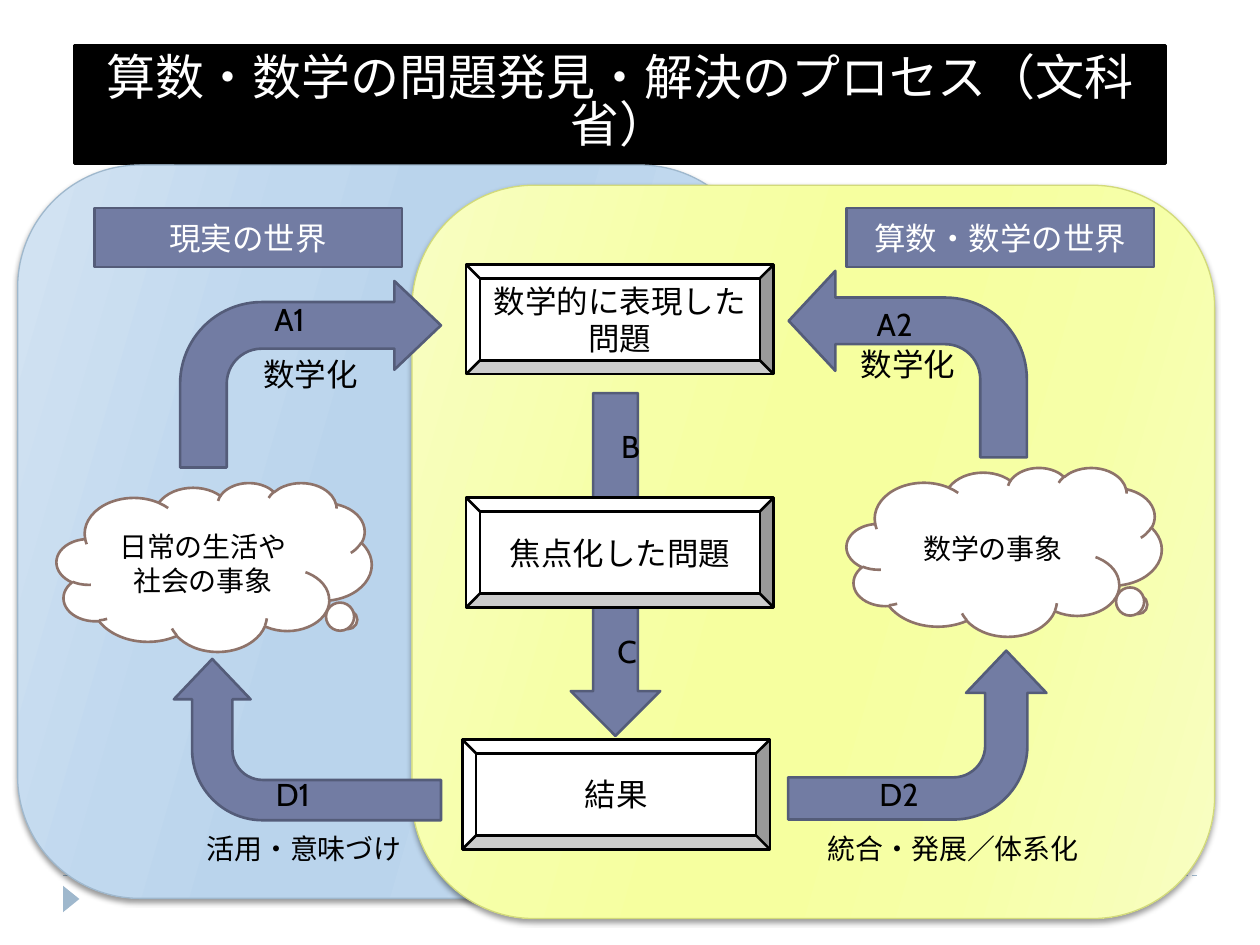
from lxml import etree
from pptx import Presentation, util as u
from pptx.dml.color import RGBColor
from pptx.enum import dml, shapes, text
from pptx.oxml import ns

COLORS = {
    "black": "000000", "white": "FFFFFF", "arrow": "727CA3", "arrow_edge": "545C79",
    "cloud_edge": "8E736A", "footer": "9FB8CD", "math_edge": "D2DA7A",
}
REAL_WORLD = ["D3E3F2", "C0D8EE", "BAD4EC"]
MATH_WORLD = ["F8FEC2", "F6FFA7", "F6FF9F"]
S = shapes.MSO_SHAPE
BEND = (0.25, 0.238, 0.25, 0.438)
BOX = (24.4, 8.7)
CLOUD = (25, 13.4)
TAG = (24.4, 4.7)


def cell(count):
    """The grid has 100 columns and 75 rows, each a tenth of an inch."""
    return u.Inches(count / 10)


def color(name):
    return RGBColor.from_string(COLORS[name])


def child(parent, tag, **attributes):
    return etree.SubElement(parent, ns.qn(tag), {k: str(v) for k, v in attributes.items()})


class Diagram:
    font, edge = "Cabin", 1.5

    def __init__(self, slide):
        self.slide = slide

    def set_text(self, shape, content, size, ink, align=text.PP_ALIGN.CENTER, font=None):
        frame = shape.text_frame
        frame.word_wrap = True
        frame.text = content
        for paragraph in frame.paragraphs:
            paragraph.alignment = align
            style = paragraph.font
            style.size = u.Pt(size)
            style.color.rgb = color(ink)
            style.name = font or self.font
            child(paragraph._p.pPr.find(ns.qn("a:defRPr")), "a:ea", typeface=style.name)
        return frame

    def paint(self, shape, fill, edge):
        shape.fill.solid()
        shape.fill.fore_color.rgb = color(fill)
        shape.line.color.rgb = color(edge)
        shape.line.width = u.Pt(self.edge)

    def title(self, content, *at):
        title = self.slide.shapes.title
        title.left, title.top, title.width, title.height = map(cell, at)
        self.paint(title, "black", "black")
        frame = self.set_text(title, content, 28, "white", font="Noto Sans CJK JP")
        frame.auto_size = text.MSO_AUTO_SIZE.NONE
        frame.vertical_anchor = text.MSO_ANCHOR.MIDDLE
        frame.paragraphs[0].line_spacing = 0.8

    def shape(self, kind, at, fill="arrow", edge="arrow_edge", content="", size=18,
              ink="black", adjust=(), turn=0, flip=None):
        shape = self.slide.shapes.add_shape(kind, *map(cell, at))
        shape.shadow.inherit = False
        self.paint(shape, fill, edge)
        for i, value in enumerate(adjust):
            shape.adjustments[i] = value
        shape.rotation = turn
        if flip:
            shape._element.spPr.xfrm.set(flip, "1")
        if content:
            self.set_text(shape, content, size, ink)
        return shape

    def box(self, content, left, top):
        self.shape(S.BEVEL, (left, top, *BOX), "white", "black", content)

    def cloud(self, content, left, top):
        self.shape(S.CLOUD_CALLOUT, (left, top, *CLOUD), "white", "cloud_edge", content,
                   16, adjust=(0.422, 0.311))

    def tag(self, content, left, top):
        self.shape(S.RECTANGLE, (left, top, *TAG), content=content, ink="white")

    def bend(self, at, **options):
        self.shape(S.BENT_ARROW, at, **{"adjust": BEND, **options})

    def panel(self, at, tints, edge):
        panel = self.shape(S.ROUNDED_RECTANGLE, at, edge=edge)
        panel.line.width = u.Pt(0.75)
        properties = panel._element.spPr
        # Tints run from the edge to the middle and back
        gradient = etree.Element(ns.qn("a:gradFill"), rotWithShape="1")
        stops = child(gradient, "a:gsLst")
        for share, tint in zip((0, 30, 45, 55, 73, 100), tints + tints[::-1]):
            child(child(stops, "a:gs", pos=share * 1000), "a:srgbClr", val=tint)
        child(gradient, "a:lin", ang=16 * 60000, scaled=0)
        properties.replace(properties.find(ns.qn("a:solidFill")), gradient)
        # Soft shadow below
        shadow = child(properties.find(ns.qn("a:effectLst")), "a:outerShdw",
                       blurRad=u.Pt(3), dist=u.Pt(2), dir=90 * 60000, rotWithShape=0)
        child(child(shadow, "a:srgbClr", val=COLORS["black"]), "a:alpha", val=40000)

    def label(self, content, left, top, width=6.9, height=4, size=18, inset=1):
        label = self.slide.shapes.add_textbox(*map(cell, (left, top, width, height)))
        frame = self.set_text(label, content, size, "black", text.PP_ALIGN.LEFT)
        frame.margin_left = cell(inset)
        frame.auto_size = text.MSO_AUTO_SIZE.SHAPE_TO_FIT_TEXT

    def rule(self, left, right, top):
        rule = self.slide.shapes.add_connector(
            shapes.MSO_CONNECTOR.STRAIGHT, *map(cell, (left, top, right, top)))
        rule.line.color.rgb = color("footer")
        rule.line.width = u.Pt(0.75)
        rule.line.dash_style = dml.MSO_LINE.DASH
        child(rule._element.spPr, "a:effectLst")


def main():
    deck = Presentation()
    deck.slide_width, deck.slide_height = cell(100), cell(75)
    d = Diagram(deck.slides.add_slide(deck.slide_layouts[5]))

    # Title and footer marks
    d.title("算数・数学の問題発見・解決のプロセス（文科省）", 5.9, 3.6, 86.6, 9.4)
    d.rule(5, 95, 69.5)
    marker = d.shape(S.ISOSCELES_TRIANGLE, (4.6, 70.7, 2.1, 1.3), "footer", turn=90)
    marker.line.fill.background()

    # The two overlapping worlds
    d.panel((1.4, 13.1, 59.1, 58.2), REAL_WORLD, "footer")
    d.panel((32.7, 14.7, 63.7, 58.2), MATH_WORLD, "math_edge")
    d.tag("現実の世界", 7.5, 16.5)
    d.tag("算数・数学の世界", 67.2, 16.5)

    # Phenomena
    d.cloud("日常の生活や\n社会の事象", 4.5, 38.3)
    d.cloud("数学の事象", 67.2, 37.1)

    # Arrows of the cycle
    d.bend((14.3, 22.3, 20.7, 14.8), content="数学化")
    d.bend((62.6, 21.5, 18.9, 14.8), content="数学化", flip="flipH",
           adjust=(0.25, 0.268, 0.25, 0.438))
    d.bend((18, 48.1, 12.8, 21.2), turn=270)
    d.bend((66.1, 48.1, 13.4, 20.5), turn=270, flip="flipV")
    d.shape(S.DOWN_ARROW, (45.3, 31.2, 7.1, 27.2))

    # Stages of the problem
    d.box("数学的に表現した問題", 37, 21)
    d.box("焦点化した問題", 37, 39.5)
    d.box("結果", 36.7, 58.7)

    # Arrow labels
    for content, left, top in (("A1", 20.8, 23.3), ("A2", 68.6, 23.7),
                               ("D1", 20.9, 61), ("D2", 68.8, 61)):
        d.label(content, left, top)
    d.label("B", 45.8, 33.4, inset=3.5)
    d.label("C", 45.5, 49.7, inset=3.5)
    for content, left in (("活用・意味づけ", 15.4), ("統合・発展／体系化", 64.7)):
        d.label(content, left, 65.5, 25.3, 3.7, 16)

    deck.save("out.pptx")


if __name__ == "__main__":
    main()
